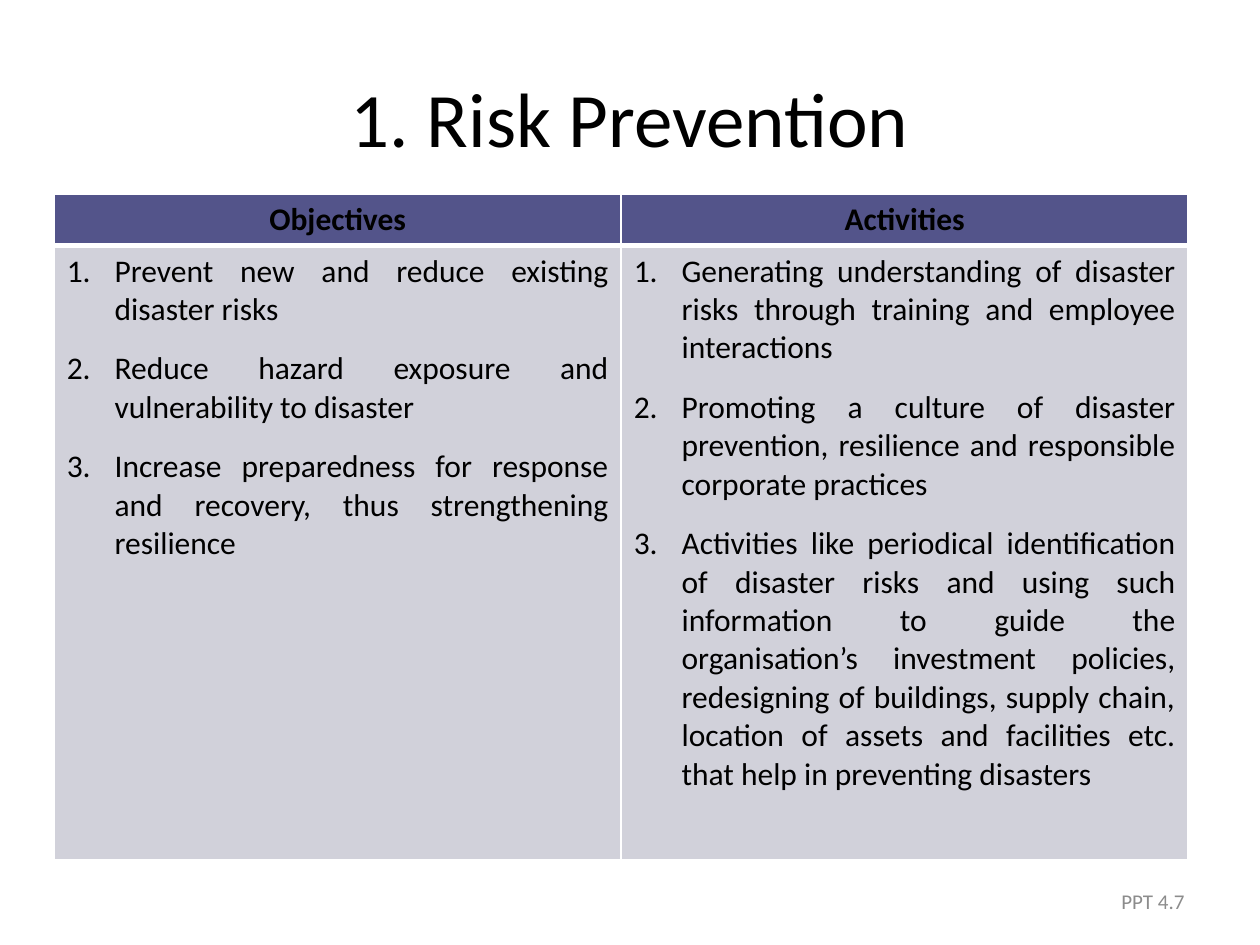
from dataclasses import dataclass

from lxml import etree
from pptx import Presentation
from pptx import util as u
from pptx.dml.color import RGBColor
from pptx.enum import text
from pptx.oxml import ns

WIDTH, HEIGHT = 10, 7.5
FONT = "Calibri"
COLORS = {
    "ink": "000000",
    "header": "53548A",
    "body": "D1D1DA",
    "border": "FFFFFF",
    "footer": "8C8C8C",
}
ROW_HEIGHTS = (0.41, 4.87)
HANGING = u.Inches(0.38)
ALIGN = text.PP_ALIGN


@dataclass(frozen=True)
class Label:
    wording: str
    left: float
    top: float
    width: float
    height: float
    size: int
    color: str
    align: ALIGN


@dataclass(frozen=True)
class Column:
    heading: str
    items: tuple[str, ...]


LABELS = (
    Label("1. Risk Prevention", 0.05, 0.04, 0.9, 1 / 6, 44, "ink", ALIGN.CENTER),
    Label("PPT 4.7", 0.717, 0.927, 0.233, 0.053, 12, "footer", ALIGN.RIGHT),
)
COLUMNS = (
    Column("Objectives", (
        "Prevent new and reduce existing disaster risks",
        "Reduce hazard exposure and vulnerability to disaster",
        "Increase preparedness for response and recovery, thus strengthening resilience",
    )),
    Column("Activities", (
        "Generating understanding of disaster risks through training and employee interactions",
        "Promoting a culture of disaster prevention, resilience and responsible corporate practices",
        "Activities like periodical identification of disaster risks and using such information "
        "to guide the organisation’s investment policies, redesigning of buildings, supply chain, "
        "location of assets and facilities etc. that help in preventing disasters",
    )),
)


def style(para, size: int, color: str, align: ALIGN, bold: bool = False) -> None:
    para.alignment = align
    para.font.name = FONT
    para.font.size = u.Pt(size)
    para.font.bold = bold
    para.font.color.rgb = RGBColor.from_string(COLORS[color])


def add_label(page, label: Label) -> None:
    box = page.shapes.add_textbox(
        u.Inches(label.left * WIDTH), u.Inches(label.top * HEIGHT),
        u.Inches(label.width * WIDTH), u.Inches(label.height * HEIGHT),
    )
    frame = box.text_frame
    frame.word_wrap = True
    frame.vertical_anchor = text.MSO_ANCHOR.MIDDLE
    frame.text = label.wording
    style(frame.paragraphs[0], label.size, label.color, label.align)


def add_border(cell, side: str, points: int) -> None:
    properties = cell._tc.get_or_add_tcPr()
    line = etree.SubElement(properties, ns.qn(f"a:ln{side}"), w=str(u.Pt(points)))
    fill = etree.SubElement(line, ns.qn("a:solidFill"))
    etree.SubElement(fill, ns.qn("a:srgbClr"), val=COLORS["border"])


def number(para) -> None:
    properties = para._p.get_or_add_pPr()
    properties.set("marL", str(HANGING))
    properties.set("indent", str(-HANGING))
    etree.SubElement(properties, ns.qn("a:buFont"), typeface="+mj-lt")
    etree.SubElement(properties, ns.qn("a:buAutoNum"), type="arabicPeriod")


def fill_cell(cell, lines: tuple[str, ...], is_header: bool) -> None:
    thick = "B" if is_header else "T"
    for side in "LRTB":
        add_border(cell, side, 3 if side == thick else 1)
    cell.fill.solid()
    cell.fill.fore_color.rgb = RGBColor.from_string(COLORS["header" if is_header else "body"])
    cell.text = "\n".join(lines)
    for para in cell.text_frame.paragraphs:
        para.space_after = u.Pt(12)
        if not is_header:
            number(para)
        style(para, 18, "ink", ALIGN.CENTER if is_header else ALIGN.JUSTIFY, is_header)


def add_columns(page, columns: tuple[Column, ...]) -> None:
    table = page.shapes.add_table(
        len(ROW_HEIGHTS), len(columns), u.Inches(0.43), u.Inches(1.54),
        u.Inches(0.9 * WIDTH), u.Inches(sum(ROW_HEIGHTS)),
    ).table
    for row, height in zip(table.rows, ROW_HEIGHTS):
        row.height = u.Inches(height)
    for index, column in enumerate(columns):
        fill_cell(table.cell(0, index), (column.heading,), True)
        fill_cell(table.cell(1, index), column.items, False)


def main() -> None:
    deck = Presentation()
    deck.slide_width, deck.slide_height = u.Inches(WIDTH), u.Inches(HEIGHT)
    page = deck.slides.add_slide(deck.slide_layouts[6])
    add_columns(page, COLUMNS)
    for label in LABELS:
        add_label(page, label)
    deck.save("out.pptx")


if __name__ == "__main__":
    main()
